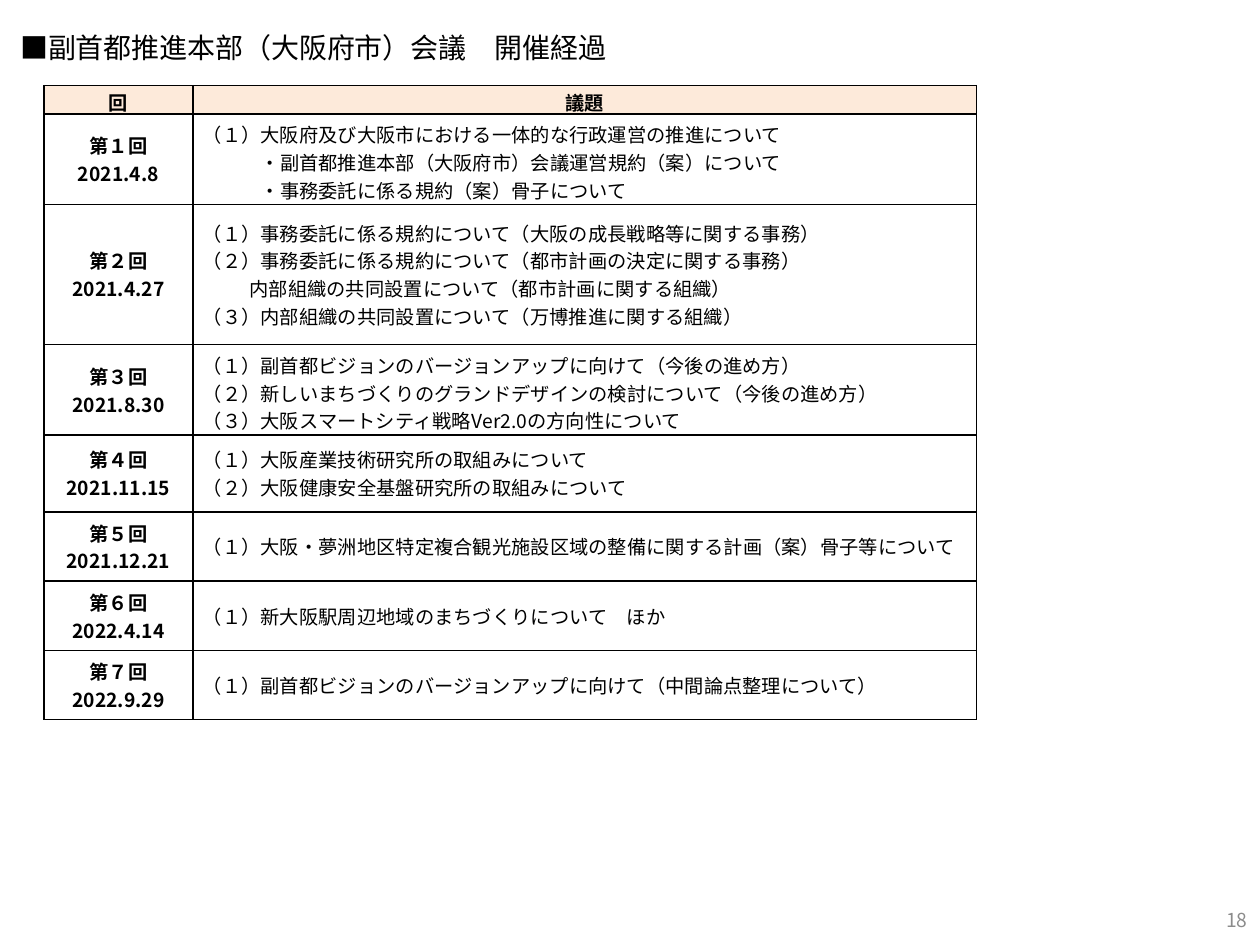
from lxml import etree
from pptx import Presentation
from pptx import util as u
from pptx.dml.color import RGBColor
from pptx.enum import text
from pptx.oxml import ns

FONT = "Noto Sans CJK JP"
BLACK = RGBColor(0x00, 0x00, 0x00)
GRAY = RGBColor(0x8C, 0x8C, 0x8C)
PEACH = RGBColor(0xFD, 0xEA, 0xDA)
SUB_ITEM, CONTINUATION = 0.46, 0.37  # left indents in inches

COLUMN_WIDTHS = [1.18, 6.22]
ROW_HEIGHTS = [0.17, 0.72, 1.11, 0.72, 0.61, 0.55, 0.55, 0.55]
HEADINGS = ["回", "議題"]
# Each agenda line is a string, or a (string, indent) pair
MEETINGS = [
    ("第１回", "2021.4.8", [
        "（１）大阪府及び大阪市における一体的な行政運営の推進について",
        ("・副首都推進本部（大阪府市）会議運営規約（案）について", SUB_ITEM),
        ("・事務委託に係る規約（案）骨子について", SUB_ITEM)]),
    ("第２回", "2021.4.27", [
        "（１）事務委託に係る規約について（大阪の成長戦略等に関する事務）",
        "（２）事務委託に係る規約について（都市計画の決定に関する事務）",
        ("内部組織の共同設置について（都市計画に関する組織）", CONTINUATION),
        "（３）内部組織の共同設置について（万博推進に関する組織）"]),
    ("第３回", "2021.8.30", [
        "（１）副首都ビジョンのバージョンアップに向けて（今後の進め方）",
        "（２）新しいまちづくりのグランドデザインの検討について（今後の進め方）",
        "（３）大阪スマートシティ戦略Ver2.0の方向性について"]),
    ("第４回", "2021.11.15", [
        "（１）大阪産業技術研究所の取組みについて",
        "（２）大阪健康安全基盤研究所の取組みについて"]),
    ("第５回", "2021.12.21", [
        "（１）大阪・夢洲地区特定複合観光施設区域の整備に関する計画（案）骨子等について"]),
    ("第６回", "2022.4.14", [
        "（１）新大阪駅周辺地域のまちづくりについて　ほか"]),
    ("第７回", "2022.9.29", [
        "（１）副首都ビジョンのバージョンアップに向けて（中間論点整理について）"]),
]


def place(shape, left, top, width, height):
    shape.left, shape.top = u.Inches(left), u.Inches(top)
    shape.width, shape.height = u.Inches(width), u.Inches(height)


def set_margins(holder, horizontal, vertical):
    holder.margin_left = holder.margin_right = u.Inches(horizontal)
    holder.margin_top = holder.margin_bottom = u.Inches(vertical)


def write(frame, lines, size=11, color=BLACK, bold=False,
          align=text.PP_ALIGN.LEFT, hanging=0, before=0):
    for number, line in enumerate(lines):
        words, indent = (line, hanging) if isinstance(line, str) else line
        paragraph = frame.add_paragraph() if number else frame.paragraphs[0]
        paragraph.alignment = align
        paragraph.space_before = u.Pt(before)
        properties = paragraph._p.get_or_add_pPr()
        properties.set("marL", str(u.Inches(indent)))
        properties.set("indent", str(-u.Inches(hanging)))
        run = paragraph.add_run()
        run.text = words
        run.font.size, run.font.bold, run.font.name = u.Pt(size), bold, FONT
        run.font.color.rgb = color
        east_asian = etree.SubElement(run._r.get_or_add_rPr(), ns.qn("a:ea"))
        east_asian.set("typeface", FONT)


def add_borders(cell):
    properties = cell._tc.get_or_add_tcPr()
    for position, side in enumerate(("a:lnL", "a:lnR", "a:lnT", "a:lnB")):
        line = etree.Element(ns.qn(side), w=str(u.Pt(1)))
        fill = etree.SubElement(line, ns.qn("a:solidFill"))
        etree.SubElement(fill, ns.qn("a:srgbClr"), val=str(BLACK))
        properties.insert(position, line)


def fill_cell(cell, lines, margins, fill=None, **text_format):
    cell.vertical_anchor = text.MSO_ANCHOR.MIDDLE
    set_margins(cell, *margins)
    if fill is None:
        cell.fill.background()
    else:
        cell.fill.solid()
        cell.fill.fore_color.rgb = fill
    add_borders(cell)
    write(cell.text_frame, lines, **text_format)


def add_title(slide, words):
    title = slide.shapes.title
    place(title, 0.12, 0.2, 5.41, 0.35)
    frame = title.text_frame
    frame.word_wrap = True
    frame.auto_size = text.MSO_AUTO_SIZE.SHAPE_TO_FIT_TEXT
    frame.vertical_anchor = text.MSO_ANCHOR.MIDDLE
    set_margins(frame, 0.04, 0.04)
    write(frame, [words], size=16, hanging=0.19, before=6)


def add_meeting_table(slide):
    graphic = slide.shapes.add_table(
        len(ROW_HEIGHTS), len(COLUMN_WIDTHS), 0, 0, u.Inches(7.4), u.Inches(5.04))
    table = graphic.table
    table.first_row = table.horz_banding = False
    for column, width in zip(table.columns, COLUMN_WIDTHS):
        column.width = u.Inches(width)
    for row, height in zip(table.rows, ROW_HEIGHTS):
        row.height = u.Inches(height)
    place(graphic, 0.35, 0.68, 7.4, 5.04)

    centered = {"bold": True, "align": text.PP_ALIGN.CENTER}
    for column, heading in enumerate(HEADINGS):
        fill_cell(table.cell(0, column), [heading], (0.04, 0.02), PEACH, **centered)
    for row, (session, date, agenda) in enumerate(MEETINGS, start=1):
        fill_cell(table.cell(row, 0), [session, date], (0.1, 0.05), **centered)
        fill_cell(table.cell(row, 1), agenda, (0.08, 0.05))


def add_page_number(slide, number):
    box = slide.shapes.add_textbox(0, 0, 0, 0)
    place(box, 7.67, 7.1, 2.33, 0.4)
    box.text_frame.word_wrap = True
    box.text_frame.vertical_anchor = text.MSO_ANCHOR.MIDDLE
    write(box.text_frame, [number], color=GRAY, align=text.PP_ALIGN.RIGHT)


def main():
    deck = Presentation()
    deck.slide_width, deck.slide_height = u.Inches(10), u.Inches(7.5)
    slide = deck.slides.add_slide(deck.slide_layouts[5])
    add_title(slide, "■副首都推進本部（大阪府市）会議　開催経過")
    add_meeting_table(slide)
    add_page_number(slide, "18")
    deck.save("out.pptx")


if __name__ == "__main__":
    main()
